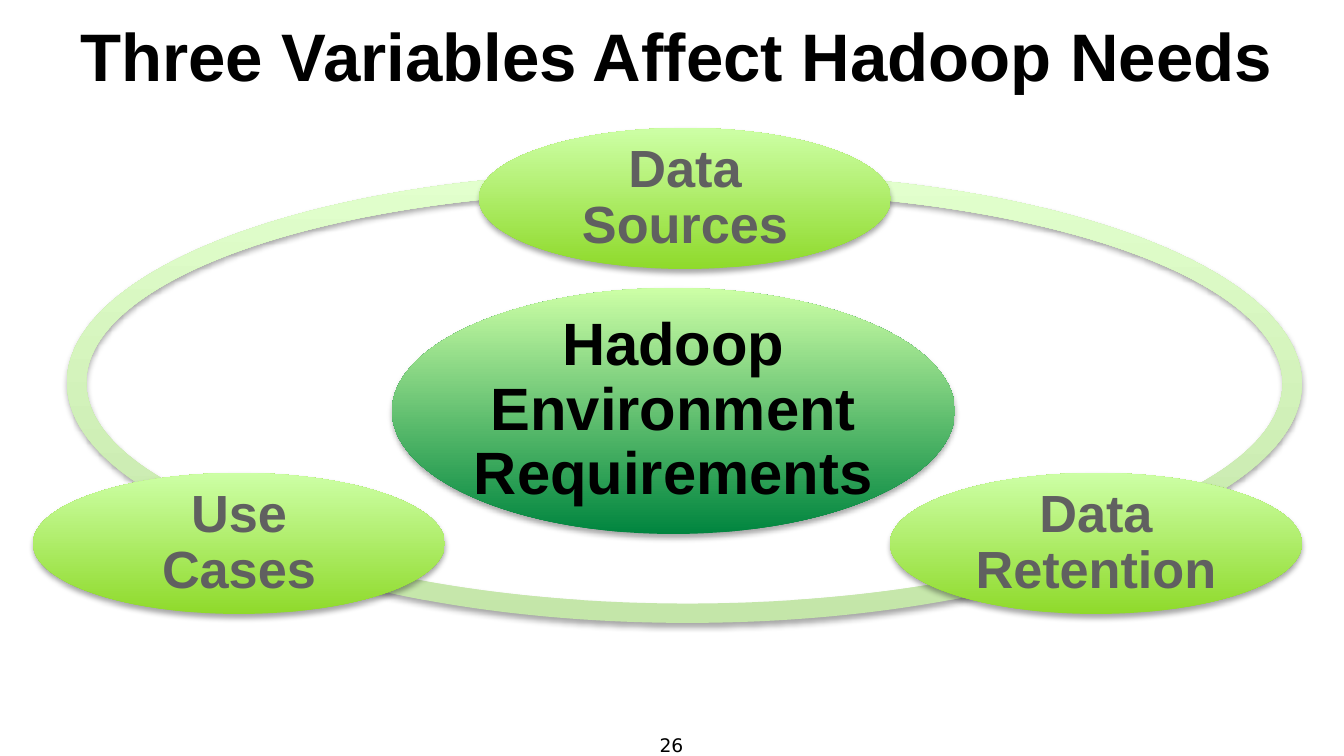
from dataclasses import dataclass

from lxml.etree import SubElement
from pptx import Presentation
from pptx.dml.color import RGBColor
from pptx.enum.shapes import MSO_SHAPE
from pptx.enum.text import MSO_ANCHOR, MSO_AUTO_SIZE, PP_ALIGN
from pptx.oxml.ns import qn
from pptx.util import Emu, Pt

EMU_PER_PX = 914400 / 134.4


@dataclass(frozen=True)
class Theme:
    font: str = "Arial"
    number_font: str = "DejaVu Sans"
    black: str = "000000"
    grey: str = "606060"
    ring: tuple[str, str] = ("C4E6A9", "E2FFCD")
    hub: tuple[str, str] = ("00853F", "CDFFA6")
    variable: tuple[str, str] = ("8FDA2B", "CDFFA6")
    title_size: int = 36
    hub_size: int = 32
    variable_size: int = 28
    number_size: int = 10


@dataclass(frozen=True)
class Box:
    left: int
    top: int
    width: int
    height: int

    def emu(self) -> tuple[Emu, ...]:
        return tuple(px(n) for n in (self.left, self.top, self.width, self.height))


@dataclass(frozen=True)
class Arc:
    left: int
    top: int
    start: int
    end: int


@dataclass(frozen=True)
class Bubble:
    text: str
    box: Box
    gradient: tuple[str, str]
    size: int
    color: str
    inset_x: int
    inset_y: int


THEME = Theme()
ARC_WIDTH, ARC_HEIGHT, ARC_THICKNESS = 1157, 421, 0.046
# Left, bottom and right arcs; every end lies beneath a variable bubble
ARCS = [
    Arc(67, 172, 162, 270),
    Arc(109, 202, 18, 162),
    Arc(145, 173, 270, 18),
]


def variable_bubble(text: str, left: int, top: int) -> Bubble:
    return Bubble(text, Box(left, top, 412, 141), THEME.variable,
                  THEME.variable_size, THEME.grey, 20, 18)


# Negative side insets let the hub text run wider than the oval's inner box
BUBBLES = [
    Bubble("Hadoop Environment Requirements", Box(392, 288, 563, 246),
           THEME.hub, THEME.hub_size, THEME.black, -28, 0),
    variable_bubble("Data Sources", 479, 128),
    variable_bubble("Data Retention", 890, 473),
    variable_bubble("Use Cases", 33, 473),
]


def px(length: int) -> Emu:
    return Emu(round(length * EMU_PER_PX))


def apply(target, values: dict) -> None:
    for name, value in values.items():
        setattr(target, name, value)


def write(frame, text: str, align, font: dict, color: str, spacing=None) -> None:
    para = frame.paragraphs[0]
    apply(para, {"alignment": align, "line_spacing": spacing})
    span = para.add_run()
    span.text = text
    apply(span.font, font)
    span.font.color.rgb = RGBColor.from_string(color)


def style_shape(shape, gradient: tuple[str, str]) -> None:
    """Upward gradient, no outline and a soft shadow below."""
    shape.fill.gradient()
    shape.fill.gradient_angle = 90
    for stop, color in zip(shape.fill.gradient_stops, gradient):
        stop.color.rgb = RGBColor.from_string(color)
    shape.line.fill.background()
    shape.shadow.inherit = False
    effects = shape.element.spPr.find(qn("a:effectLst"))
    shadow = SubElement(effects, qn("a:outerShdw"), blurRad="40000", dist="23000",
                        dir="5400000", rotWithShape="0")
    tone = SubElement(shadow, qn("a:srgbClr"), val=THEME.black)
    SubElement(tone, qn("a:alpha"), val="35000")


def draw_arc(page, arc: Arc) -> None:
    box = Box(arc.left, arc.top, ARC_WIDTH, ARC_HEIGHT)
    shape = page.shapes.add_shape(MSO_SHAPE.BLOCK_ARC, *box.emu())
    # Angles are stored in 1/60000 degree, adjustments in 1/100000
    for index, value in enumerate((arc.start * 0.6, arc.end * 0.6, ARC_THICKNESS)):
        shape.adjustments[index] = value
    style_shape(shape, THEME.ring)


def draw_bubble(page, bubble: Bubble) -> None:
    shape = page.shapes.add_shape(MSO_SHAPE.OVAL, *bubble.box.emu())
    style_shape(shape, bubble.gradient)
    frame = shape.text_frame
    side, end = px(bubble.inset_x), px(bubble.inset_y)
    apply(frame, {"word_wrap": True, "vertical_anchor": MSO_ANCHOR.MIDDLE,
                  "margin_left": side, "margin_right": side,
                  "margin_top": end, "margin_bottom": end})
    font = {"name": THEME.font, "size": Pt(bubble.size), "bold": True}
    write(frame, bubble.text, PP_ALIGN.CENTER, font, bubble.color, 0.9)


def main() -> None:
    deck = Presentation()
    apply(deck, {"slide_width": px(1344), "slide_height": px(756)})
    page = deck.slides.add_slide(deck.slide_layouts[5])

    # Title
    title = page.shapes.title
    place = Box(67, 0, 1254, 110).emu()
    apply(title, dict(zip(("left", "top", "width", "height"), place)))
    apply(title.text_frame, {"vertical_anchor": MSO_ANCHOR.MIDDLE, "word_wrap": True,
                             "auto_size": MSO_AUTO_SIZE.NONE})
    write(title.text_frame, "Three Variables Affect Hadoop Needs", PP_ALIGN.LEFT,
          {"name": THEME.font, "size": Pt(THEME.title_size), "bold": True}, THEME.black)

    # Page number
    number = page.shapes.add_textbox(*Box(638, 727, 67, 27).emu())
    number.text_frame.word_wrap = True
    write(number.text_frame, "26", PP_ALIGN.CENTER,
          {"name": THEME.number_font, "size": Pt(THEME.number_size)}, THEME.black)

    # Ring, then the hub and its three variables
    for arc in ARCS:
        draw_arc(page, arc)
    for bubble in BUBBLES:
        draw_bubble(page, bubble)

    deck.save("out.pptx")


if __name__ == "__main__":
    main()
